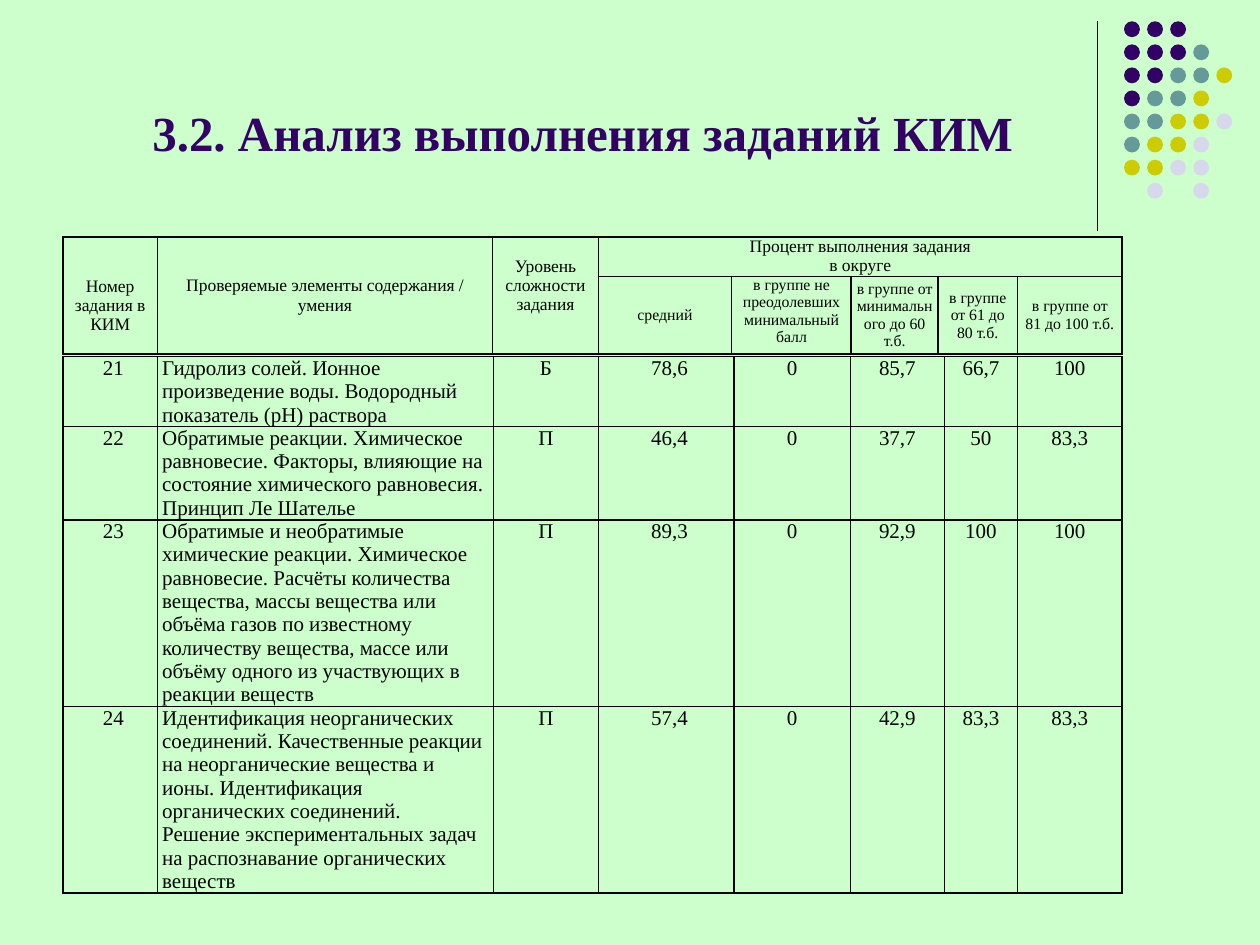
"""Build the slide on how exam tasks were completed, with two aligned tables."""
import pptx
import pptx.dml.color
import pptx.enum.shapes
import pptx.enum.text
import pptx.oxml
import pptx.oxml.ns
import pptx.util

Cm = pptx.util.Cm
Pt = pptx.util.Pt
RGBColor = pptx.dml.color.RGBColor
Align = pptx.enum.text.PP_ALIGN
Anchor = pptx.enum.text.MSO_ANCHOR

MINT = RGBColor(0xCC, 0xFF, 0xCC)
PURPLE = RGBColor(0x33, 0x00, 0x66)
TEAL = RGBColor(0x66, 0x99, 0x99)
YELLOW = RGBColor(0xCC, 0xCC, 0x00)
LILAC = RGBColor(0xD8, 0xD8, 0xEC)
BLACK = RGBColor(0x00, 0x00, 0x00)

DOT_COLORS = {"P": PURPLE, "T": TEAL, "Y": YELLOW, "L": LILAC}
DOT_ROWS = ["PPP", "PPPT", "PPTTY", "PTTY", "TTYYL", "TYYL", "YYLL", " L L"]

HEADER_WIDTHS = [1.9, 6.76, 2.13, 2.69, 2.41, 1.75, 1.6, 2.11]
BODY_WIDTHS = [1.9, 6.78, 2.11, 2.74, 2.34, 1.9, 1.47, 2.11]
HEADER_HEIGHTS = [0.79, 1.55]
BODY_HEIGHTS = [1.41, 1.88, 3.76, 3.76]

GROUPS = [
    "средний",
    "в группе не преодолевших минимальный балл",
    "в группе от минимального до 60 т.б.",
    "в группе от 61 до 80 т.б.",
    "в группе от 81 до 100 т.б.",
]
TASKS = [
    ("21", ["Гидролиз солей. Ионное произведение воды. Водородный показатель (pH) раствора"],
     "Б", "78,6", "0", "85,7", "66,7", "100"),
    ("22", ["Обратимые реакции. Химическое равновесие. Факторы, влияющие на состояние "
            "химического равновесия. Принцип Ле Шателье"],
     "П", "46,4", "0", "37,7", "50", "83,3"),
    ("23", ["Обратимые и необратимые химические реакции. Химическое равновесие. "
            "Расчёты количества вещества, массы вещества или",
            "объёма газов по известному количеству вещества, массе или объёму одного "
            "из участвующих в реакции веществ"],
     "П", "89,3", "0", "92,9", "100", "100"),
    ("24", ["Идентификация неорганических соединений. Качественные реакции на "
            "неорганические вещества и ионы. Идентификация органических соединений.",
            "Решение экспериментальных задач на распознавание органических веществ"],
     "П", "57,4", "0", "42,9", "83,3", "83,3"),
]


class SlideBuilder:
    """Hold the style and the current slide."""

    font = "Times New Roman"
    margin = 0.1

    def __init__(self, presentation):
        self.slide = presentation.slides.add_slide(presentation.slide_layouts[5])
        fill = self.slide.background.fill
        fill.solid()
        fill.fore_color.rgb = MINT

    def run(self, paragraph, text, size, color=BLACK, bold=False):
        run = paragraph.add_run()
        run.text = text
        run.font.name = self.font
        run.font.size = Pt(size)
        run.font.color.rgb = color
        run.font.bold = bold

    def title(self, text, left, top, width, height):
        shape = self.slide.shapes.title
        shape.left, shape.top = Cm(left), Cm(top)
        shape.width, shape.height = Cm(width), Cm(height)
        shape.text_frame.vertical_anchor = Anchor.BOTTOM
        paragraph = shape.text_frame.paragraphs[0]
        paragraph.alignment = Align.CENTER
        self.run(paragraph, text, 28, PURPLE, True)

    def line(self, left, top, right, bottom):
        connector = self.slide.shapes.add_connector(
            pptx.enum.shapes.MSO_CONNECTOR.STRAIGHT,
            Cm(left), Cm(top), Cm(right), Cm(bottom))
        connector.line.color.rgb = BLACK
        connector.line.width = Pt(0.75)
        properties = connector._element.spPr
        properties.append(pptx.oxml.parse_xml(
            f"<a:effectLst {pptx.oxml.ns.nsdecls('a')}/>"))

    def dot(self, left, top, size, color):
        shape = self.slide.shapes.add_shape(
            pptx.enum.shapes.MSO_SHAPE.OVAL, Cm(left), Cm(top), Cm(size), Cm(size))
        shape.shadow.inherit = False
        shape.fill.solid()
        shape.fill.fore_color.rgb = color
        shape.line.fill.background()

    def table(self, left, top, widths, heights):
        frame = self.slide.shapes.add_table(
            len(heights), len(widths), Cm(left), Cm(top),
            Cm(sum(widths)), Cm(sum(heights)))
        table = frame.table
        table.first_row = table.horz_banding = False
        for column, width in zip(table.columns, widths):
            column.width = Cm(width)
        for row, height in zip(table.rows, heights):
            row.height = Cm(height)
        for cell in table.iter_cells():
            self.plain_cell(cell)
        return table

    def plain_cell(self, cell):
        properties = cell._tc.get_or_add_tcPr()
        for side in ("lnL", "lnR", "lnT", "lnB"):
            properties.append(pptx.oxml.parse_xml(
                f"<a:{side} {pptx.oxml.ns.nsdecls('a')} w=\"{Pt(1)}\"><a:solidFill>"
                f"<a:srgbClr val=\"{BLACK}\"/></a:solidFill></a:{side}>"))
        cell.fill.background()
        cell.margin_left = cell.margin_right = Cm(self.margin)
        cell.margin_top = cell.margin_bottom = 0

    def cell_text(self, cell, texts, size, align=Align.CENTER, anchor=Anchor.TOP):
        cell.vertical_anchor = anchor
        frame = cell.text_frame
        for index, text in enumerate(texts):
            paragraph = frame.add_paragraph() if index else frame.paragraphs[0]
            paragraph.alignment = align
            for number, line in enumerate(text.split("\n")):
                if number:
                    paragraph.add_line_break()
                self.run(paragraph, line, size)


def add_header(builder):
    table = builder.table(1.27, 4.78, HEADER_WIDTHS, HEADER_HEIGHTS)
    headings = [
        ["Номер", "задания в КИМ"],
        ["Проверяемые элементы содержания / умения"],
        ["Уровень сложности задания"],
    ]
    for column, texts in enumerate(headings):
        cell = table.cell(0, column)
        cell.merge(table.cell(1, column))
        builder.cell_text(cell, texts, 10, anchor=Anchor.MIDDLE)
    table.cell(0, 0).margin_top = Cm(0.4)
    table.cell(0, 2).margin_bottom = Cm(0.4)
    table.cell(0, 3).merge(table.cell(0, 7))
    builder.cell_text(table.cell(0, 3), ["Процент выполнения задания\nв округе"], 10)
    for column, text in enumerate(GROUPS, 3):
        anchor = Anchor.TOP if column == 4 else Anchor.MIDDLE
        builder.cell_text(table.cell(1, column), [text], 9, anchor=anchor)


def add_body(builder):
    table = builder.table(1.27, 7.19, BODY_WIDTHS, BODY_HEIGHTS)
    for row, task in enumerate(TASKS):
        for column, value in enumerate(task):
            cell = table.cell(row, column)
            if column == 1:
                builder.cell_text(cell, value, 12, Align.LEFT)
            else:
                builder.cell_text(cell, [value], 12)
            if column in (0, 3):
                cell.margin_left = Cm(builder.margin + 0.13)


def main():
    presentation = pptx.Presentation()
    presentation.slide_width, presentation.slide_height = Cm(25.4), Cm(19.05)
    builder = SlideBuilder(presentation)
    builder.line(22.12, 0.43, 22.12, 4.65)
    for row, pattern in enumerate(DOT_ROWS):
        for column, letter in enumerate(pattern):
            if letter in DOT_COLORS:
                builder.dot(22.66 + 0.465 * column, 0.43 + 0.465 * row, 0.32,
                            DOT_COLORS[letter])
    builder.title("3.2. Анализ выполнения заданий КИМ", 1.27, 0.33, 20.95, 3.05)
    add_header(builder)
    add_body(builder)
    presentation.save("out.pptx")


if __name__ == "__main__":
    main()
